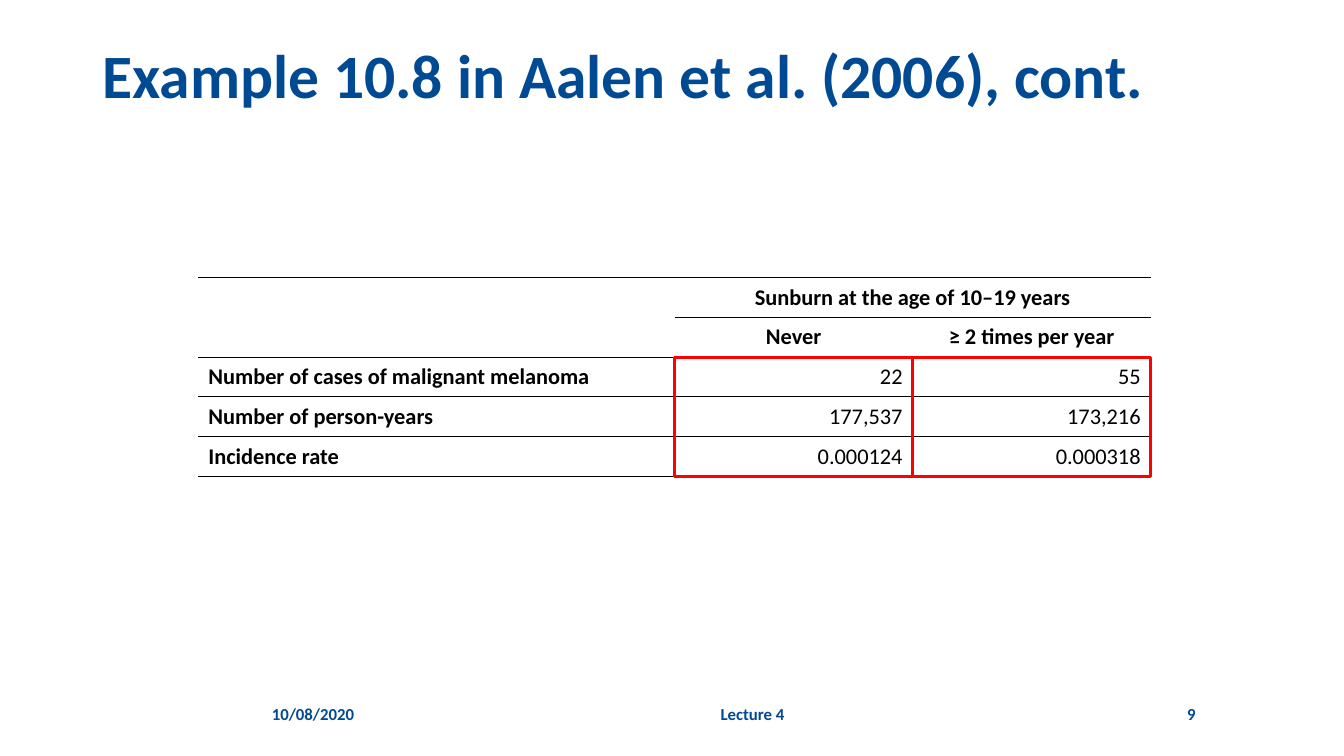
from dataclasses import dataclass
from lxml.etree import SubElement as Sub
from pptx import Presentation
from pptx.dml.color import RGBColor as RGB
from pptx.enum.shapes import MSO_SHAPE as Shape
from pptx.enum.text import MSO_ANCHOR as Anchor, PP_ALIGN as Align
from pptx.oxml.ns import qn
from pptx.util import Cm, Pt


@dataclass(frozen=True)
class Theme:
    font: str = "Calibri"
    blue: str = "004A93"
    black: str = "000000"
    red: str = "FF0000"
    title: int = 44
    body: int = 16
    foot: int = 12
    rule: int = 1
    frame: int = 2


class Deck:
    def __init__(self, theme):
        self.theme = theme
        self.prs = Presentation()
        self.prs.slide_width, self.prs.slide_height = Cm(33.87), Cm(19.05)
        self.slide = self.prs.slides.add_slide(self.prs.slide_layouts[6])

    def style(self, para, size, color, bold, align):
        para.alignment = align
        font = para.font
        font.name, font.size, font.bold = self.theme.font, Pt(size), bold
        font.color.rgb = RGB.from_string(color)

    def text(self, words, box, size, align=Align.LEFT, anchor=Anchor.MIDDLE):
        frame = self.slide.shapes.add_textbox(*map(Cm, box)).text_frame
        frame.word_wrap = True
        frame.vertical_anchor = anchor
        para = frame.paragraphs[0]
        para.text = words
        self.style(para, size, self.theme.blue, True, align)
        return para

    def edge(self, cell, side, shown):
        line = Sub(cell._tc.get_or_add_tcPr(), qn(f"a:ln{side}"))
        if shown:
            line.set("w", str(Pt(self.theme.rule)))
            fill = Sub(line, qn("a:solidFill"))
            Sub(fill, qn("a:srgbClr")).set("val", self.theme.black)
        else:
            line.set("w", "0")
            Sub(line, qn("a:noFill"))

    def table(self, rows, left, top, widths, high, heads):
        total = len(rows)
        table = self.slide.shapes.add_table(
            total, len(widths), Cm(left), Cm(top),
            Cm(sum(widths)), Cm(high * total)).table
        table.first_row = table.horz_banding = False
        for col, width in zip(table.columns, widths):
            col.width = Cm(width)
        for r, row in enumerate(rows):
            table.rows[r].height = Cm(high)
            for c, words in enumerate(row):
                cell = table.cell(r, c)
                # Rules everywhere except inside the empty corner
                for side, level in zip("LRTB", (None, None, r, r + 1)):
                    corner = c == 0 and level == 1
                    self.edge(cell, side, level is not None and not corner)
                cell.fill.background()
                cell.vertical_anchor = Anchor.MIDDLE
                para = cell.text_frame.paragraphs[0]
                para.text = words
                head = r < heads
                align = (Align.LEFT if c == 0 else
                         Align.CENTER if head else Align.RIGHT)
                self.style(para, self.theme.body, self.theme.black,
                           head or c == 0, align)
        return table

    def frame(self, box):
        rect = self.slide.shapes.add_shape(Shape.RECTANGLE, *map(Cm, box))
        rect.shadow.inherit = False
        rect.fill.background()
        rect.line.color.rgb = RGB.from_string(self.theme.red)
        rect.line.width = Pt(self.theme.frame)


def main():
    theme = Theme()
    deck = Deck(theme)

    # Title
    title = deck.text("Example 10.8 in Aalen et al. (2006), cont.",
                      (2.33, 1.02, 29.21, 3.68), theme.title,
                      anchor=Anchor.TOP)
    title.line_spacing = 0.9

    # Melanoma table
    rows = [
        ("", "Sunburn at the age of 10–19 years", ""),
        ("", "Never", "≥ 2 times per year"),
        ("Number of cases of malignant melanoma", "22", "55"),
        ("Number of person-years", "177,537", "173,216"),
        ("Incidence rate", "0.000124", "0.000318"),
    ]
    left, top, high, heads = 5, 7, 1, 2
    widths = (12, 6, 6)
    table = deck.table(rows, left, top, widths, high, heads)
    table.cell(0, 1).merge(table.cell(0, 2))

    # Footer
    for words, x, width, align in (
            ("10/08/2020", 6.6, 3.33, Align.LEFT),
            ("Lecture 4", 10.34, 17.25, Align.CENTER),
            ("9", 27.99, 2.39, Align.RIGHT)):
        deck.text(words, (x, 17.48, width, 1.02), theme.foot, align)

    # Red frames around the two groups
    for c in (1, 2):
        deck.frame((left + sum(widths[:c]), top + heads * high,
                    widths[c], (len(rows) - heads) * high))

    deck.prs.save("out.pptx")


if __name__ == "__main__":
    main()
